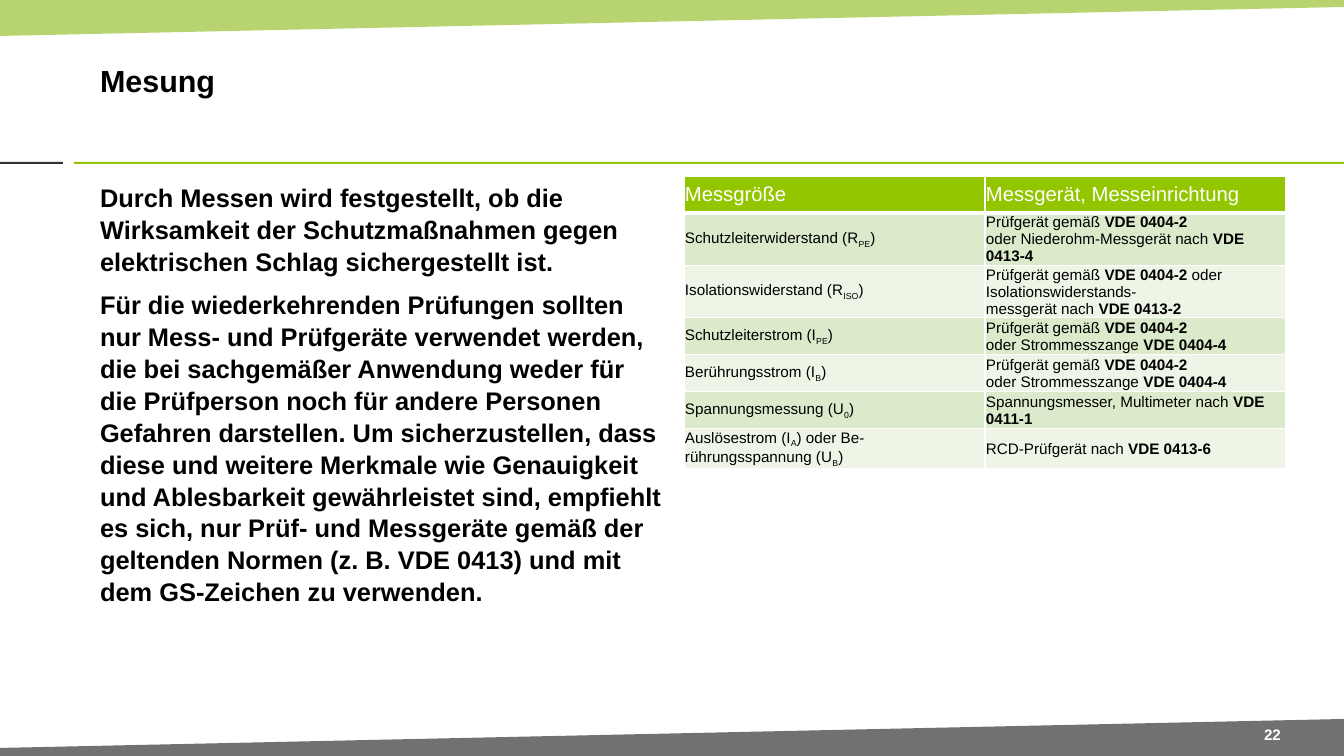
from lxml import etree
from pptx import Presentation
from pptx.dml.color import RGBColor
from pptx.enum.text import MSO_ANCHOR, MSO_AUTO_SIZE, PP_ALIGN
from pptx.enum.shapes import MSO_SHAPE
from pptx.oxml.ns import qn
from pptx.util import Pt

PX = 10004  # EMU per px
WIDTH, HEIGHT = 1344, 756
FONT = "Arial"
TOP, MIDDLE = MSO_ANCHOR.TOP, MSO_ANCHOR.MIDDLE
LEFT, CENTER = PP_ALIGN.LEFT, PP_ALIGN.CENTER
NO_FIT = MSO_AUTO_SIZE.NONE
RECTANGLE = MSO_SHAPE.RECTANGLE

BLACK = RGBColor(0x00, 0x00, 0x00)
WHITE = RGBColor(0xFF, 0xFF, 0xFF)
GREEN = RGBColor(0x94, 0xC6, 0x00)
BAND_GREEN = RGBColor(0x95, 0xC0, 0x2A)
BAND_GREY = RGBColor(0x70, 0x71, 0x73)
DARK = RGBColor(0x31, 0x31, 0x30)
ROW_FILLS = (RGBColor(0xDC, 0xEA, 0xCC), RGBColor(0xEE, 0xF5, 0xE7))

# Content; in table rows, text between bars is subscript (left) or bold (right)
TITLE = "Mesung"
PAGE = "22"
BODY = [
    "Durch Messen wird festgestellt, ob die Wirksamkeit der Schutzmaßnahmen "
    "gegen elektrischen Schlag sichergestellt ist.",
    "Für die wiederkehrenden Prüfungen sollten nur Mess- und Prüfgeräte "
    "verwendet werden, die bei sachgemäßer Anwendung weder für die Prüfperson "
    "noch für andere Personen Gefahren darstellen. Um sicherzustellen, dass "
    "diese und weitere Merkmale wie Genauigkeit und Ablesbarkeit gewährleistet "
    "sind, empfiehlt es sich, nur Prüf- und Messgeräte gemäß der geltenden "
    "Normen (z. B. VDE 0413) und mit dem GS-Zeichen zu verwenden.",
]
MEASUREMENTS = [
    ("Messgröße", "Messgerät, Messeinrichtung"),
    ("Schutzleiterwiderstand (R|PE|)",
     "Prüfgerät gemäß |VDE 0404-2|\noder Niederohm-Messgerät nach |VDE 0413-4|"),
    ("Isolationswiderstand (R|ISO|)",
     "Prüfgerät gemäß |VDE 0404-2| oder Isolationswiderstands-\n"
     "messgerät nach |VDE 0413-2|"),
    ("Schutzleiterstrom (I|PE|)",
     "Prüfgerät gemäß |VDE 0404-2|\noder Strommesszange |VDE 0404-4|"),
    ("Berührungsstrom (I|B|)",
     "Prüfgerät gemäß |VDE 0404-2|\noder Strommesszange |VDE 0404-4|"),
    ("Spannungsmessung (U|0|)",
     "Spannungsmesser, Multimeter nach |VDE 0411-1|"),
    ("Auslösestrom (I|A|) oder Be-\nrührungsspannung (U|B|)",
     "RCD-Prüfgerät nach |VDE 0413-6|"),
]

# Layout in px
BANDS = [
    ([(0, 0), (WIDTH, 0), (WIDTH, 7), (0, 36)], BAND_GREEN, 67),
    ([(WIDTH, HEIGHT), (0, HEIGHT), (0, 748), (WIDTH, 719)], BAND_GREY, 100),
]
RULES = [((0, 162, 63, 2), DARK), ((74, 162, 1270, 2), GREEN)]
TITLE_BOX = (90, 26, 1055, 109)
BODY_BOX = (90, 176, 582, 495)
PAGE_BOX = (1233, 721, 79, 27)
TABLE_LEFT, TABLE_TOP, COLUMN_WIDTH, ROW_HEIGHT = 684, 176, 301, 37


def emu(box):
    return [value * PX for value in box]


def apply(target, formats):
    for name, value in formats.items():
        setattr(target, name, value)


def font_format(size, color, bold):
    return {"name": FONT, "size": Pt(size), "bold": bold}, color


def style_font(font, size, color, bold):
    formats, rgb = font_format(size, color, bold)
    apply(font, formats)
    font.color.rgb = rgb


def fill_text(shape, box, lines, size, color, anchor, align):
    left, top, width, height = emu(box)
    apply(shape, {"left": left, "top": top, "width": width, "height": height})
    frame = shape.text_frame
    apply(frame, {"word_wrap": True, "auto_size": NO_FIT, "vertical_anchor": anchor,
                  "margin_left": 10 * PX, "margin_right": 10 * PX,
                  "margin_top": 5 * PX, "margin_bottom": 5 * PX})
    for index, line in enumerate(lines):
        paragraph = frame.add_paragraph() if index else frame.paragraphs[0]
        properties = paragraph._p.get_or_add_pPr()
        properties.set("marL", "0")
        properties.set("indent", "0")
        etree.SubElement(properties, qn("a:buNone"))
        apply(paragraph, {"alignment": align, "space_before": Pt(8 if index else 0)})
        run = paragraph.add_run()
        run.text = line
        style_font(run.font, size, color, True)
    return frame


def plain(shape, color):
    shape.shadow.inherit = False
    shape.fill.solid()
    shape.fill.fore_color.rgb = color
    shape.line.fill.background()


def add_border(cell, side, points):
    line = etree.SubElement(cell._tc.get_or_add_tcPr(), qn(f"a:ln{side}"),
                            w=str(Pt(points)))
    fill = etree.SubElement(line, qn("a:solidFill"))
    etree.SubElement(fill, qn("a:srgbClr"), val=str(WHITE))


def fill_cell(cell, text, row, column):
    header = row == 0
    apply(cell, {"vertical_anchor": MIDDLE, "margin_left": PX, "margin_right": PX,
                 "margin_top": PX, "margin_bottom": 0})
    for side in "LRTB":
        below_header = (header and side == "B") or (row == 1 and side == "T")
        add_border(cell, side, 3 if below_header else 1)
    cell.fill.solid()
    cell.fill.fore_color.rgb = GREEN if header else ROW_FILLS[(row - 1) % 2]
    paragraph = cell.text_frame.paragraphs[0]
    for part, words in enumerate(text.split("|")):
        marked = part % 2 == 1
        for index, line in enumerate(words.split("\n")):
            if index:
                paragraph.add_line_break()
            if not line:
                continue
            run = paragraph.add_run()
            run.text = line
            style_font(run.font, 16 if header else 12, WHITE if header else BLACK,
                       marked and column == 1)
            if marked and column == 0:
                run._r.get_or_add_rPr().set("baseline", "-25000")


def main():
    deck = Presentation()
    deck.slide_width, deck.slide_height = emu((WIDTH, HEIGHT))
    slide = deck.slides.add_slide(deck.slide_layouts[1])
    shapes = slide.shapes

    # Slanted bands at top and bottom
    for points, color, opacity in BANDS:
        builder = shapes.build_freeform(*points[0], scale=PX)
        builder.add_line_segments(points[1:], close=True)
        band = builder.convert_to_shape()
        plain(band, color)
        if opacity < 100:
            tint = band._element.spPr.find(".//" + qn("a:srgbClr"))
            etree.SubElement(tint, qn("a:alpha"), val=str(opacity * 1000))

    # Rules under the title
    for box, color in RULES:
        plain(shapes.add_shape(RECTANGLE, *emu(box)), color)

    # Title, body and page number
    fill_text(shapes.title, TITLE_BOX, [TITLE], 24, BLACK, MIDDLE, LEFT)
    body = fill_text(slide.placeholders[1], BODY_BOX, BODY, 20, BLACK, TOP, LEFT)
    for paragraph in body.paragraphs:
        paragraph.line_spacing = 1.05
    page = shapes.add_textbox(*emu(PAGE_BOX))
    fill_text(page, PAGE_BOX, [PAGE], 12, WHITE, MIDDLE, CENTER)

    # Table of measurements
    rows, columns = len(MEASUREMENTS), len(MEASUREMENTS[0])
    table_box = (TABLE_LEFT, TABLE_TOP, columns * COLUMN_WIDTH, rows * ROW_HEIGHT)
    table = shapes.add_table(rows, columns, *emu(table_box)).table
    for row, texts in enumerate(MEASUREMENTS):
        for column, text in enumerate(texts):
            fill_cell(table.cell(row, column), text, row, column)

    deck.save("out.pptx")


if __name__ == "__main__":
    main()
